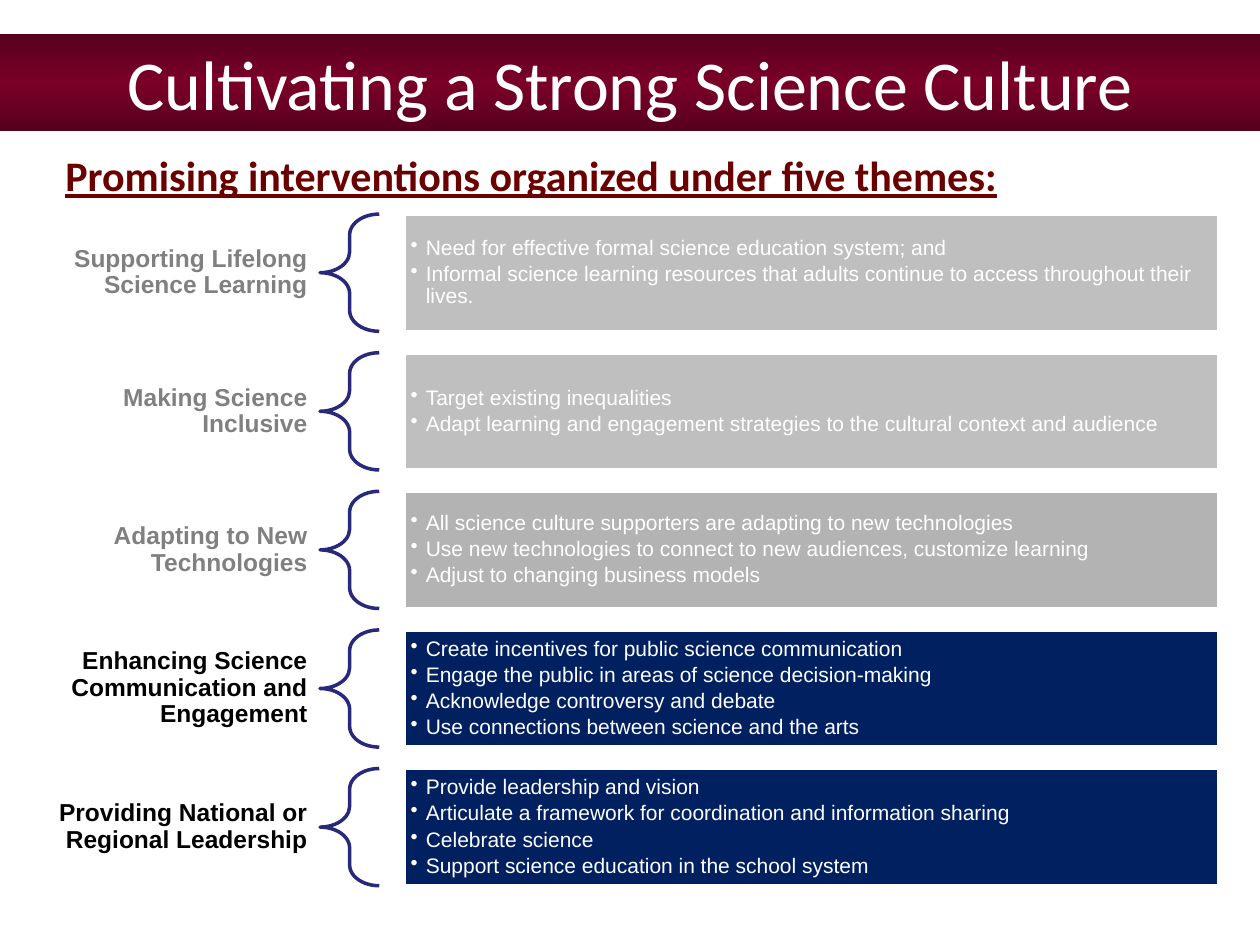
from copy import deepcopy
from lxml.etree import SubElement
from pptx import Presentation
from pptx.dml.color import RGBColor
from pptx.enum.shapes import MSO_SHAPE as Shape
from pptx.enum.text import MSO_ANCHOR as Anchor, PP_ALIGN as Align
from pptx.oxml.ns import qn
from pptx.util import Inches, Pt

TITLE = "Cultivating a Strong Science Culture"
HEAD = "Promising interventions organized under five themes:"
GREY, BLACK, NAVY, WHITE = "808080", "000000", "002060", "FFFFFF"
THEMES = [
    ("Supporting Lifelong Science Learning", GREY, "BFBFBF", [
        "Need for effective formal science education system; and",
        "Informal science learning resources that adults continue to access throughout their lives."]),
    ("Making Science Inclusive", GREY, "BFBFBF", [
        "Target existing inequalities",
        "Adapt learning and engagement strategies to the cultural context and audience"]),
    ("Adapting to New Technologies", GREY, "B3B3B3", [
        "All science culture supporters are adapting to new technologies",
        "Use new technologies to connect to new audiences, customize learning",
        "Adjust to changing business models"]),
    ("Enhancing Science Communication and Engagement", BLACK, NAVY, [
        "Create incentives for public science communication",
        "Engage the public in areas of science decision-making",
        "Acknowledge controversy and debate",
        "Use connections between science and the arts"]),
    ("Providing National or Regional Leadership", BLACK, NAVY, [
        "Provide leadership and vision",
        "Articulate a framework for coordination and information sharing",
        "Celebrate science",
        "Support science education in the school system"]),
]
TOP, PITCH, HIGH = 1.7, 1.1, 0.93
LABEL, BRACE, PANEL = (0.17, 2.38), (2.54, 0.47), (3.21, 6.46)

deck = Presentation()
deck.slide_width, deck.slide_height = Inches(10), Inches(7.5)
slide = deck.slides.add_slide(deck.slide_layouts[6])


def rgb(code):
    return RGBColor.from_string(code)


def add_box(kind, *area):
    area = [Inches(n) for n in area]
    if kind is None:
        return slide.shapes.add_textbox(*area)
    box = slide.shapes.add_shape(kind, *area)
    box.shadow.inherit = False
    return box


def edge(box, color):
    box.line.color.rgb = rgb(color)
    box.line.width = Pt(2)


def write(box, lines, font, size, color, align=Align.LEFT, pad=(0.1, 0.05),
          space=1, anchor=Anchor.MIDDLE, bold=False, under=False, dots=False):
    frame = box.text_frame
    frame.word_wrap = True
    frame.vertical_anchor = anchor
    frame.margin_left = frame.margin_right = Inches(pad[0])
    frame.margin_top = frame.margin_bottom = Inches(pad[1])
    frame.text = "\n".join(lines)
    for para in frame.paragraphs:
        para.alignment = align
        para.line_spacing = space
        if dots:
            para.space_after = Pt(2)
            props = para._p.get_or_add_pPr()
            props.set("marL", str(Inches(0.12)))
            props.set("indent", str(-Inches(0.12)))
            SubElement(props, qn("a:buChar"), char="•")
        for run in para.runs:
            run.font.name, run.font.size = font, Pt(size)
            run.font.bold, run.font.underline = bold, under
            run.font.color.rgb = rgb(color)


head = add_box(None, 0.42, 1.08, 9.42, 0.57)
write(head, [HEAD], "Calibri", 24, "6B0000", space=1.15, anchor=Anchor.TOP,
      bold=True, under=True)

band = add_box(Shape.RECTANGLE, 0, 0.27, 10, 0.77)
band.line.fill.background()
band.fill.gradient()
band.fill.gradient_angle = 90
stops = band.fill._xPr.find(qn("a:gradFill")).find(qn("a:gsLst"))
stops.append(deepcopy(stops[0]))
for stop, place, color in zip(band.fill.gradient_stops, (0, 0.5, 1),
                              ("57001D", "7A0028", "57001D")):
    stop.position = place
    stop.color.rgb = rgb(color)
write(band, [TITLE], "Calibri", 40, WHITE, Align.CENTER)

for row, (name, ink, fill, points) in enumerate(THEMES):
    top = TOP + row * PITCH
    label, brace, panel = [
        add_box(kind, left, top, wide, HIGH)
        for kind, (left, wide) in ((None, LABEL), (Shape.LEFT_BRACE, BRACE),
                                   (Shape.RECTANGLE, PANEL))]
    write(label, [name], "Arial", 14, ink, Align.RIGHT, (0.11, 0.04), 0.9, bold=True)
    brace.adjustments[0], brace.adjustments[1] = 0.35, 0.5
    brace.fill.background()
    edge(brace, "29297B")
    panel.fill.solid()
    panel.fill.fore_color.rgb = rgb(fill)
    edge(panel, WHITE)
    write(panel, points, "Arial", 12, WHITE, pad=(0.05, 0.05), space=0.9, dots=True)

deck.save("out.pptx")
